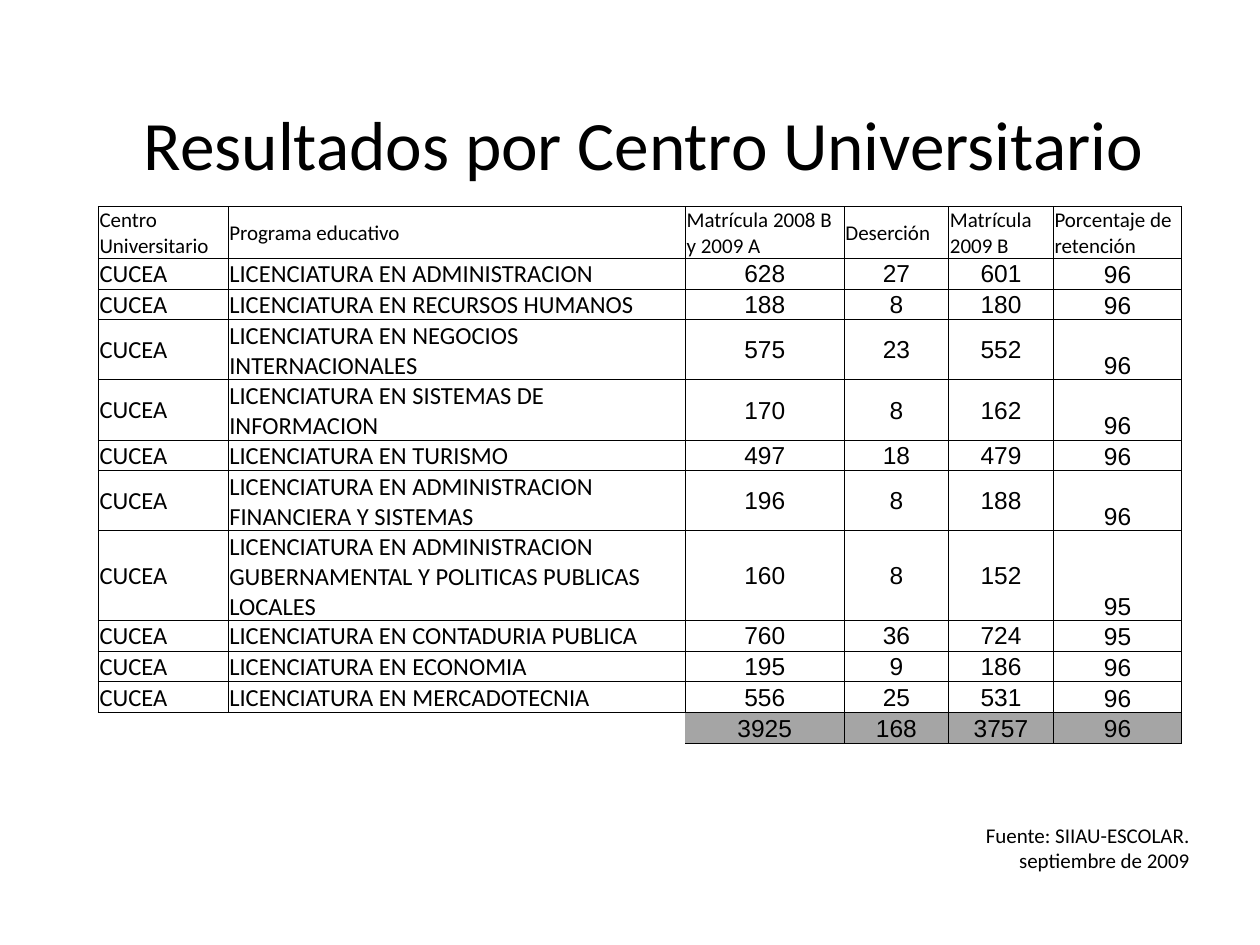
from lxml.etree import SubElement
from pptx import Presentation
from pptx.dml.color import RGBColor
from pptx.enum.text import MSO_ANCHOR as Anchor, PP_ALIGN as Align
from pptx.oxml.ns import qn
from pptx.util import Inches, Pt

BLACK = RGBColor(0, 0, 0)
WHITE = RGBColor(255, 255, 255)
GRAY = RGBColor(0xA5, 0xA5, 0xA5)
WIDE, HIGH = Inches(10), Inches(7.5)

COLS = [1.03, 3.63, 1.26, 0.83, 0.83, 1.02]
LINE = 0.2  # height of one line of text in the table
HEAD = ["Centro Universitario", "Programa educativo",
        "Matrícula 2008 B y 2009 A", "Deserción",
        "Matrícula 2009 B", "Porcentaje de retención"]
# Program, text lines, enrolled before, dropouts, enrolled after, retention
DATA = [
    ("ADMINISTRACION", 1, 628, 27, 601, 96),
    ("RECURSOS HUMANOS", 1, 188, 8, 180, 96),
    ("NEGOCIOS INTERNACIONALES", 2, 575, 23, 552, 96),
    ("SISTEMAS DE INFORMACION", 2, 170, 8, 162, 96),
    ("TURISMO", 1, 497, 18, 479, 96),
    ("ADMINISTRACION FINANCIERA Y SISTEMAS", 2, 196, 8, 188, 96),
    ("ADMINISTRACION GUBERNAMENTAL Y POLITICAS PUBLICAS LOCALES",
     3, 160, 8, 152, 95),
    ("CONTADURIA PUBLICA", 1, 760, 36, 724, 95),
    ("ECONOMIA", 1, 195, 9, 186, 96),
    ("MERCADOTECNIA", 1, 556, 25, 531, 96),
]
TOTAL = ["", "", 3925, 168, 3757, 96]


def style(para, size, face, align):
    para.alignment = align
    para.font.size = Pt(size)
    para.font.name = face
    para.font.color.rgb = BLACK


def add_text(slide, box, lines, size, align, anchor):
    """Place a text box given as shares of the slide's size."""
    x, y, w, h = box
    shape = slide.shapes.add_textbox(
        int(x * WIDE), int(y * HIGH), int(w * WIDE), int(h * HIGH))
    frame = shape.text_frame
    frame.word_wrap = True
    frame.vertical_anchor = anchor
    frame.text = "\n".join(lines)
    for para in frame.paragraphs:
        style(para, size, "Calibri", align)


def add_edges(cell, shown):
    """Draw the cell edges named in shown; clear the others."""
    props = cell._tc.get_or_add_tcPr()
    for side in "LRTB":
        edge = SubElement(props, qn("a:ln" + side), w=str(Pt(0.5)))
        if side in shown:
            fill = SubElement(edge, qn("a:solidFill"))
            SubElement(fill, qn("a:srgbClr"), val=str(BLACK))
        else:
            SubElement(edge, qn("a:noFill"))


def set_cell(cell, text, size, face, align, anchor, edges="LRTB", fill=None):
    cell.margin_left = cell.margin_right = cell.margin_top = Inches(0.01)
    cell.margin_bottom = 0
    cell.vertical_anchor = anchor
    cell.text = str(text)
    style(cell.text_frame.paragraphs[0], size, face, align)
    add_edges(cell, edges)
    if fill is None:
        cell.fill.background()
    else:
        cell.fill.solid()
        cell.fill.fore_color.rgb = fill


def add_grid(slide):
    rows = [HEAD]
    rows += [["CUCEA", "LICENCIATURA EN " + name, *nums]
             for name, _, *nums in DATA]
    rows.append(TOTAL)
    lines = [2] + [row[1] for row in DATA] + [1]
    frame = slide.shapes.add_table(
        len(rows), len(COLS), Inches(0.78), Inches(1.64),
        Inches(sum(COLS)), Inches(LINE * sum(lines)))
    table = frame.table
    table.first_row = table.horz_banding = False
    for col, width in zip(table.columns, COLS):
        col.width = Inches(width)
    for row, count in zip(table.rows, lines):
        row.height = Inches(LINE * count)

    last = len(rows) - 1
    for r, row in enumerate(rows):
        for c, text in enumerate(row):
            cell = table.cell(r, c)
            if r == 0:
                set_cell(cell, text, 12, "Calibri", Align.LEFT, Anchor.MIDDLE)
            elif r == last:
                edges = "T" if c < 2 else "RTB" if c == 2 else "LRTB"
                set_cell(cell, text, 14, "Arial", Align.CENTER, Anchor.BOTTOM,
                         edges, GRAY if c > 1 else None)
            elif c < 2:
                set_cell(cell, text, 14, "Calibri", Align.LEFT, Anchor.MIDDLE)
            elif c < 5:
                set_cell(cell, text, 14, "Arial", Align.CENTER, Anchor.MIDDLE)
            else:
                set_cell(cell, text, 14, "Arial", Align.CENTER, Anchor.BOTTOM,
                         fill=WHITE)


def main():
    deck = Presentation()
    deck.slide_width, deck.slide_height = WIDE, HIGH
    slide = deck.slides.add_slide(deck.slide_layouts[6])
    # Title
    add_text(slide, (0.086, 0.073, 0.85, 0.156),
             ["Resultados por Centro Universitario"],
             39.6, Align.CENTER, Anchor.MIDDLE)
    # Source note
    add_text(slide, (0.695, 0.864, 0.259, 0.067),
             ["Fuente: SIIAU-ESCOLAR.", "septiembre de 2009"],
             12, Align.RIGHT, Anchor.TOP)
    # Results table
    add_grid(slide)
    deck.save("out.pptx")


if __name__ == "__main__":
    main()
